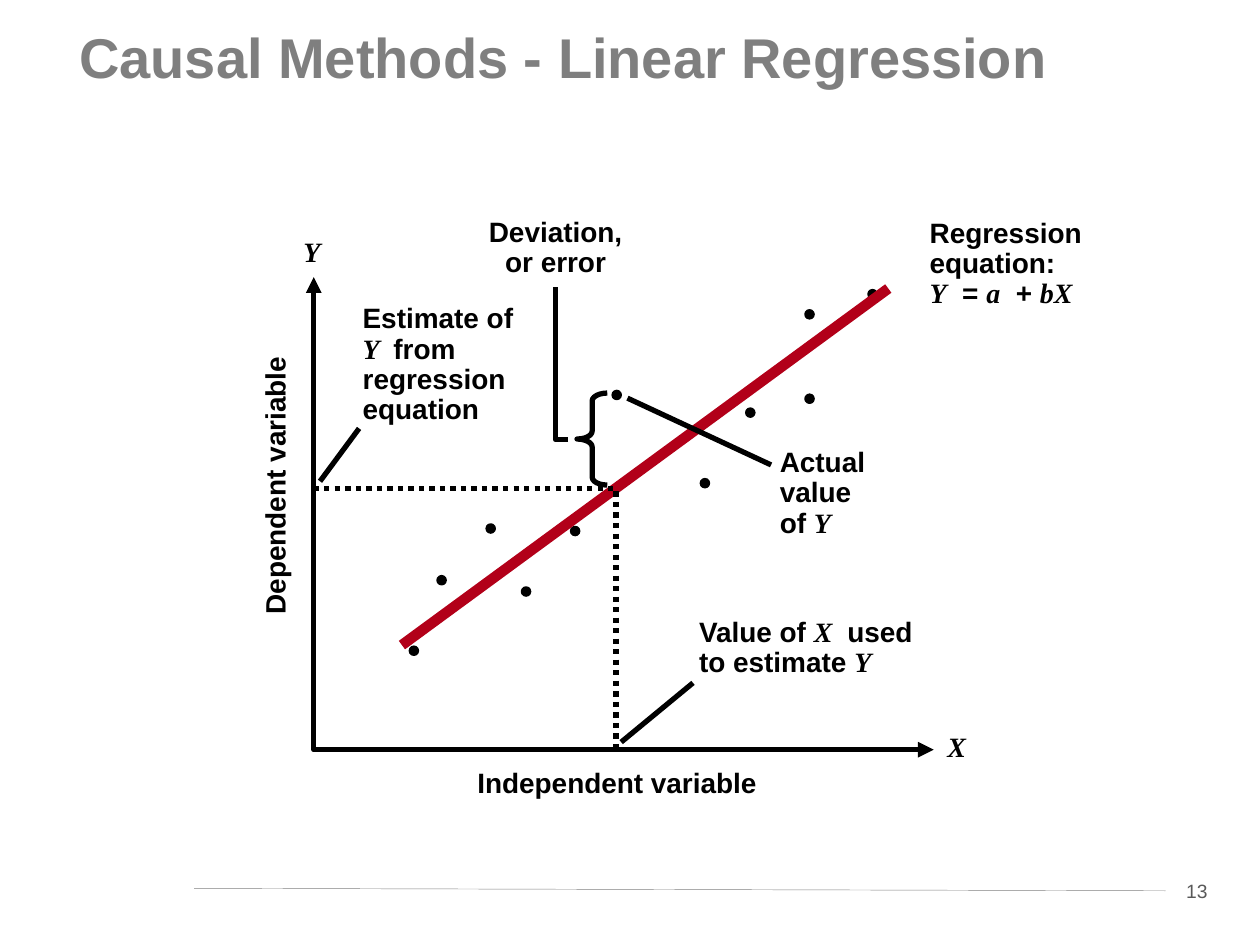
from dataclasses import dataclass

from lxml import etree
from pptx import Presentation
from pptx.dml.color import RGBColor
from pptx.enum.dml import MSO_LINE
from pptx.enum.shapes import MSO_CONNECTOR, MSO_SHAPE
from pptx.enum.text import MSO_ANCHOR, MSO_AUTO_SIZE, PP_ALIGN
from pptx.oxml.ns import qn
from pptx.util import Inches, Pt

COLUMNS, ROWS = 100, 75  # square grid over the whole slide
WIDTH, HEIGHT = Inches(10), Inches(7.5)
BLACK, RED, GREY = "000000", "B20019", "7F7F7F"
SANS, SERIF = "Arial", "Times New Roman"
DOT = 0.7


@dataclass
class Box:
    """A region of the slide, in grid columns and rows."""
    left: float
    top: float
    width: float
    height: float

    def point(self, column, row):
        return (round((self.left + column) * WIDTH / COLUMNS),
                round((self.top + row) * HEIGHT / ROWS))

    def frame(self, column, row, width, height):
        return (*self.point(column, row),
                round(width * WIDTH / COLUMNS), round(height * HEIGHT / ROWS))


def color(value):
    return RGBColor.from_string(value)


def style_line(line, value=BLACK, width=3):
    line.color.rgb = color(value)
    line.width = Pt(width)


def add_text(slide, frame, lines, size=16, value=BLACK, bold=True, wrap=False,
             align=PP_ALIGN.LEFT, spacing=0.9, fit=MSO_AUTO_SIZE.SHAPE_TO_FIT_TEXT):
    """Write lines of text; parts between asterisks are italic variables."""
    shape = slide.shapes.add_textbox(*frame)
    text_frame = shape.text_frame
    settings = {"word_wrap": wrap, "auto_size": fit, "vertical_anchor": MSO_ANCHOR.TOP}
    for name, setting in settings.items():
        setattr(text_frame, name, setting)
    for index, line in enumerate(lines):
        paragraph = text_frame.paragraphs[0] if index == 0 else text_frame.add_paragraph()
        paragraph.alignment = align
        paragraph.line_spacing = spacing
        for part, text in enumerate(line.split("*")):
            if not text:
                continue
            run = paragraph.add_run()
            run.text = text
            italic = part % 2 == 1
            font = {"name": SERIF if italic else SANS, "size": Pt(size),
                    "bold": bold, "italic": italic}
            for name, setting in font.items():
                setattr(run.font, name, setting)
            run.font.color.rgb = color(value)
    return shape


def add_line(slide, box, start, end, value=BLACK, width=3):
    line = slide.shapes.add_connector(
        MSO_CONNECTOR.STRAIGHT, *box.point(*start), *box.point(*end))
    style_line(line.line, value, width)
    etree.SubElement(line._element.spPr, qn("a:effectLst"))


def add_path(slide, box, points):
    """Draw an open, unfilled polyline."""
    start, *others = [box.point(*point) for point in points]
    builder = slide.shapes.build_freeform(*start)
    builder.add_line_segments(others, close=False)
    shape = builder.convert_to_shape()
    shape.shadow.inherit = False
    shape.fill.background()
    style_line(shape.line)
    return shape


def add_title(slide, box):
    add_text(slide, box.frame(0, 0, box.width, box.height),
             ["Causal Methods - Linear Regression"], size=32, value=GREY,
             wrap=True, spacing=1.0, fit=MSO_AUTO_SIZE.NONE)


def add_footer(slide, box):
    number_width = 5
    rule_end = box.width - number_width
    number = add_text(slide, box.frame(rule_end, 0, number_width, box.height), ["13"],
                      size=11, value="595959", bold=False, wrap=True,
                      align=PP_ALIGN.CENTER, spacing=1.0)
    number.fill.solid()
    number.fill.fore_color.rgb = color("FFFFFF")
    add_line(slide, box, (0, 1.2), (rule_end, 1.4), "808080", 0.25)


def add_observations(slide, box):
    corners = [(7.6, 29.3), (9.8, 23.7), (13.7, 19.6), (20.4, 19.8), (44, 1), (39, 2.6),
               (16.5, 24.6), (23.7, 9), (30.7, 16), (34.3, 10.4), (39, 9.3)]
    for corner in corners:
        dot = slide.shapes.add_shape(MSO_SHAPE.OVAL, *box.frame(*corner, DOT, DOT))
        dot.shadow.inherit = False
        dot.fill.solid()
        dot.fill.fore_color.rgb = color(BLACK)
        style_line(dot.line, width=1)


def add_axes(slide, box):
    axes = add_path(slide, box, [(0, 0), (0, box.height), (box.width, box.height)])
    for end in ("a:headEnd", "a:tailEnd"):
        etree.SubElement(axes.line._get_or_add_ln(), qn(end), type="triangle")
    dependent = add_text(slide, box.frame(-14.2, 14.8, 22.5, 3.4), ["Dependent variable"])
    dependent.rotation = 270
    add_text(slide, box.frame(12, 38.6, 24.2, 3.4), ["Independent variable"])
    add_text(slide, box.frame(49.3, 35.7, 3.5, 3.4), ["*X*"])
    add_text(slide, box.frame(-1.8, -3.6, 3.3, 3.4), ["*Y*"])


def add_annotations(slide, box):
    # Labels
    add_text(slide, box.frame(2.9, 1.7, 15.9, 10.6),
             ["Estimate of", "*Y * from", "regression", "equation"], wrap=True)
    add_text(slide, box.frame(47.9, -5.1, 14.1, 8.2),
             ["Regression", "equation:", "*Y*  = *a*  + *bX*"])
    add_text(slide, box.frame(36, 13.1, 8.8, 8.2), ["Actual", "value", "of *Y*"])
    add_text(slide, box.frame(29.6, 26.6, 19.1, 5.8),
             ["Value of *X * used", "to estimate *Y*"])
    add_text(slide, box.frame(12.9, -5.2, 12.6, 5.8),
             ["Deviation,", "or error"], align=PP_ALIGN.CENTER)

    # Regression line, then the leaders of the labels
    add_line(slide, box, (7, 29.2), (45.6, 0.9), RED, 6)
    leaders = [((3.6, 12), (0.5, 16.2)), ((36.3, 14.9), (24.9, 9.6)),
               ((30.1, 32.2), (24.4, 36.9))]
    for start, end in leaders:
        add_line(slide, box, start, end)

    # Deviation bracket and dotted guides to the axes
    add_path(slide, box, [(20.2, 12.9), (19.2, 12.9), (19.2, 0.8)])
    guides = add_path(slide, box, [(0, 16.8), (24, 16.8), (24, 37.3)])
    guides.line.dash_style = MSO_LINE.ROUND_DOT
    brace = slide.shapes.add_shape(MSO_SHAPE.LEFT_BRACE, *box.frame(20.9, 9.2, 2.4, 7.3))
    brace.adjustments[0] = 0.26
    brace.shadow.inherit = False
    brace.fill.background()
    style_line(brace.line)


def main():
    presentation = Presentation()
    presentation.slide_width, presentation.slide_height = WIDTH, HEIGHT
    slide = presentation.slides.add_slide(presentation.slide_layouts[6])
    plot = Box(24.9, 22, 49.2, 37.5)
    add_footer(slide, Box(15.4, 69.3, 82.1, 2.9))
    add_title(slide, Box(5.3, 1.3, 89.4, 10.1))
    add_observations(slide, plot)
    add_axes(slide, plot)
    add_annotations(slide, plot)
    presentation.save("out.pptx")


if __name__ == "__main__":
    main()
